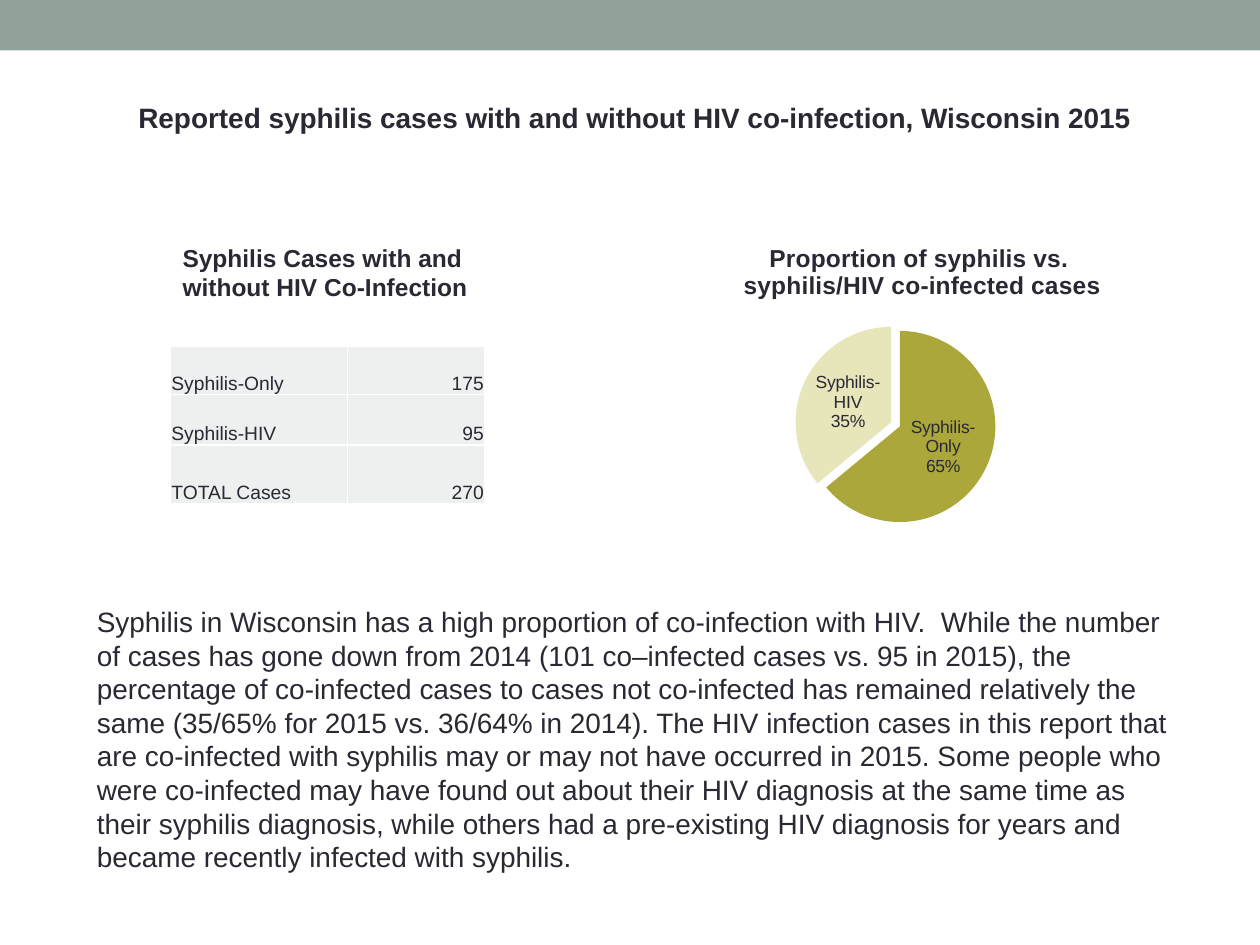
"""Build a slide on syphilis cases with and without HIV co-infection."""
from dataclasses import dataclass

from lxml.etree import SubElement
from pptx import Presentation
from pptx.chart.data import CategoryChartData
from pptx.dml.color import RGBColor
from pptx.enum.chart import XL_CHART_TYPE, XL_LABEL_POSITION
from pptx.enum.shapes import MSO_SHAPE
from pptx.enum.text import MSO_ANCHOR, MSO_AUTO_SIZE, PP_ALIGN
from pptx.oxml import parse_xml
from pptx.oxml.ns import nsdecls, qn
from pptx.util import Inches, Pt


@dataclass(frozen=True)
class Theme:
    font: str = "Arial"
    ink: str = "292934"
    band: str = "93A299"
    cell: str = "EEF0EF"
    border: str = "FFFFFF"
    slices: tuple = ("ACA73B", "E7E5BA")
    body: int = 16
    heading: int = 14
    table: int = 11
    label: int = 10


class Page:
    def __init__(self, deck, theme):
        self.theme = theme
        self.slide = deck.slides.add_slide(deck.slide_layouts[6])
        self.shapes = self.slide.shapes

    def paint(self, target, color):
        target.fill.solid()
        target.fill.fore_color.rgb = RGBColor.from_string(color)

    def style(self, font, size, bold=False):
        font.name = self.theme.font
        font.size = Pt(size)
        font.bold = bold
        font.color.rgb = RGBColor.from_string(self.theme.ink)

    def add_lines(self, frame, lines, size, bold=False, align=None):
        for index, line in enumerate(lines):
            para = frame.add_paragraph() if index else frame.paragraphs[0]
            para.alignment = align
            span = para.add_run()
            span.text = line
            self.style(span.font, size, bold)

    def band(self, left, top, width, height):
        shape = self.shapes.add_shape(MSO_SHAPE.RECTANGLE, left, top, width, height)
        shape.shadow.inherit = False
        self.paint(shape, self.theme.band)
        shape.line.fill.background()

    def text(self, left, top, width, height, words, size, bold=False):
        frame = self.shapes.add_textbox(left, top, width, height).text_frame
        frame.word_wrap = True
        frame.auto_size = MSO_AUTO_SIZE.SHAPE_TO_FIT_TEXT
        self.add_lines(frame, [words], size, bold)

    def borders(self, cell):
        properties = cell._tc.get_or_add_tcPr()
        for side in ("lnL", "lnR", "lnT", "lnB"):
            line = SubElement(properties, qn(f"a:{side}"), w=str(Pt(1)))
            fill = SubElement(line, qn("a:solidFill"))
            SubElement(fill, qn("a:srgbClr"), val=self.theme.border)

    def table(self, left, top, widths, heights, rows):
        table = self.shapes.add_table(
            len(rows), len(widths), left, top, sum(widths), sum(heights)
        ).table
        table.first_row = table.horz_banding = False
        for column, width in zip(table.columns, widths):
            column.width = width
        for row, height, values in zip(table.rows, heights, rows):
            row.height = height
            for cell, value, align in zip(row.cells, values, (PP_ALIGN.LEFT, PP_ALIGN.RIGHT)):
                cell.vertical_anchor = MSO_ANCHOR.BOTTOM
                cell.margin_left = cell.margin_right = cell.margin_top = Inches(0.01)
                cell.margin_bottom = 0
                self.borders(cell)
                self.paint(cell, self.theme.cell)
                self.add_lines(cell.text_frame, [value], self.theme.table, align=align)

    def place(self, element, **position):
        layout = element.find(qn("c:layout"))
        if layout is None:
            layout = parse_xml(f"<c:layout {nsdecls('c')}/>")
            element.insert(0, layout)
        manual = SubElement(layout, qn("c:manualLayout"))
        if "w" in position:
            SubElement(manual, qn("c:layoutTarget"), val="inner")
        for axis in "xy":
            SubElement(manual, qn(f"c:{axis}Mode"), val="edge")
        for key, value in position.items():
            SubElement(manual, qn(f"c:{key}"), val=str(value))

    def pie(self, left, top, width, height, title, slices, explosion):
        data = CategoryChartData()
        data.categories = [name for name, _, _ in slices]
        data.add_series("Series 1", [value for _, value, _ in slices])
        chart = self.shapes.add_chart(
            XL_CHART_TYPE.PIE, left, top, width, height, data
        ).chart
        chart.has_legend = False
        self.style(chart.font, self.theme.label)
        chart.has_title = True
        self.add_lines(chart.chart_title.text_frame, title, self.theme.heading, True)
        self.place(chart.chart_title._element, x=0.17, y=0.11)
        self.place(chart._chartSpace.chart.plotArea, x=0.3, y=0.34, w=0.42, h=0.54)

        plot = chart.plots[0]
        plot.vary_by_categories = True
        series = plot.series[0]
        labels = series.data_labels
        labels.show_percentage = labels.show_category_name = True
        labels.show_value = False
        labels.position = XL_LABEL_POSITION.CENTER
        for index, (_, _, caption) in enumerate(slices):
            point = series.points[index]
            self.paint(point.format, self.theme.slices[index])
            point.format.line.fill.background()
            self.add_lines(point.data_label.text_frame, caption, self.theme.label)
            point.data_label.position = XL_LABEL_POSITION.CENTER
        series._element.find(qn("c:dPt")).addprevious(
            parse_xml(f'<c:explosion {nsdecls("c")} val="{explosion}"/>')
        )


def main():
    deck = Presentation()
    deck.slide_width, deck.slide_height = Inches(10), Inches(7.5)
    theme = Theme()
    page = Page(deck, theme)
    page.band(0, 0, deck.slide_width, Inches(0.4))
    page.table(
        Inches(1.35), Inches(2.75),
        [Inches(width) for width in (1.41, 1.09)],
        [Inches(height) for height in (0.38, 0.4, 0.47)],
        [("Syphilis-Only", "175"), ("Syphilis-HIV", "95"), ("TOTAL Cases", "270")],
    )
    page.pie(
        Inches(5.17), Inches(1.57), Inches(3.8), Inches(2.95),
        ["Proportion of syphilis vs.", " syphilis/HIV co-infected cases"],
        [
            ("Syphilis Only", 64, ["Syphilis- Only", "65%"]),
            ("Syphilis-HIV", 36, ["Syphilis-HIV", "35%"]),
        ],
        explosion=5,
    )
    page.text(
        Inches(1.35), Inches(1.88), Inches(2.92), Inches(0.57),
        "Syphilis Cases with and without HIV Co-Infection", theme.heading, True,
    )
    page.text(
        Inches(0.67), Inches(4.75), Inches(8.75), Inches(2.26),
        "Syphilis in Wisconsin has a high proportion of co-infection with HIV.  "
        "While the number of cases has gone down from 2014 (101 co–infected cases "
        "vs. 95 in 2015), the percentage of co-infected cases to cases not "
        "co-infected has remained relatively the same (35/65% for 2015 vs. 36/64% "
        "in 2014). The HIV infection cases in this report that are co-infected "
        "with syphilis may or may not have occurred in 2015. Some people who were "
        "co-infected may have found out about their HIV diagnosis at the same time "
        "as their syphilis diagnosis, while others had a pre-existing HIV diagnosis "
        "for years and became recently infected with syphilis.",
        theme.body,
    )
    page.text(
        Inches(1), Inches(0.75), Inches(8.17), Inches(0.37),
        "Reported syphilis cases with and without HIV co-infection, Wisconsin 2015",
        theme.body, True,
    )
    deck.save("out.pptx")


if __name__ == "__main__":
    main()
